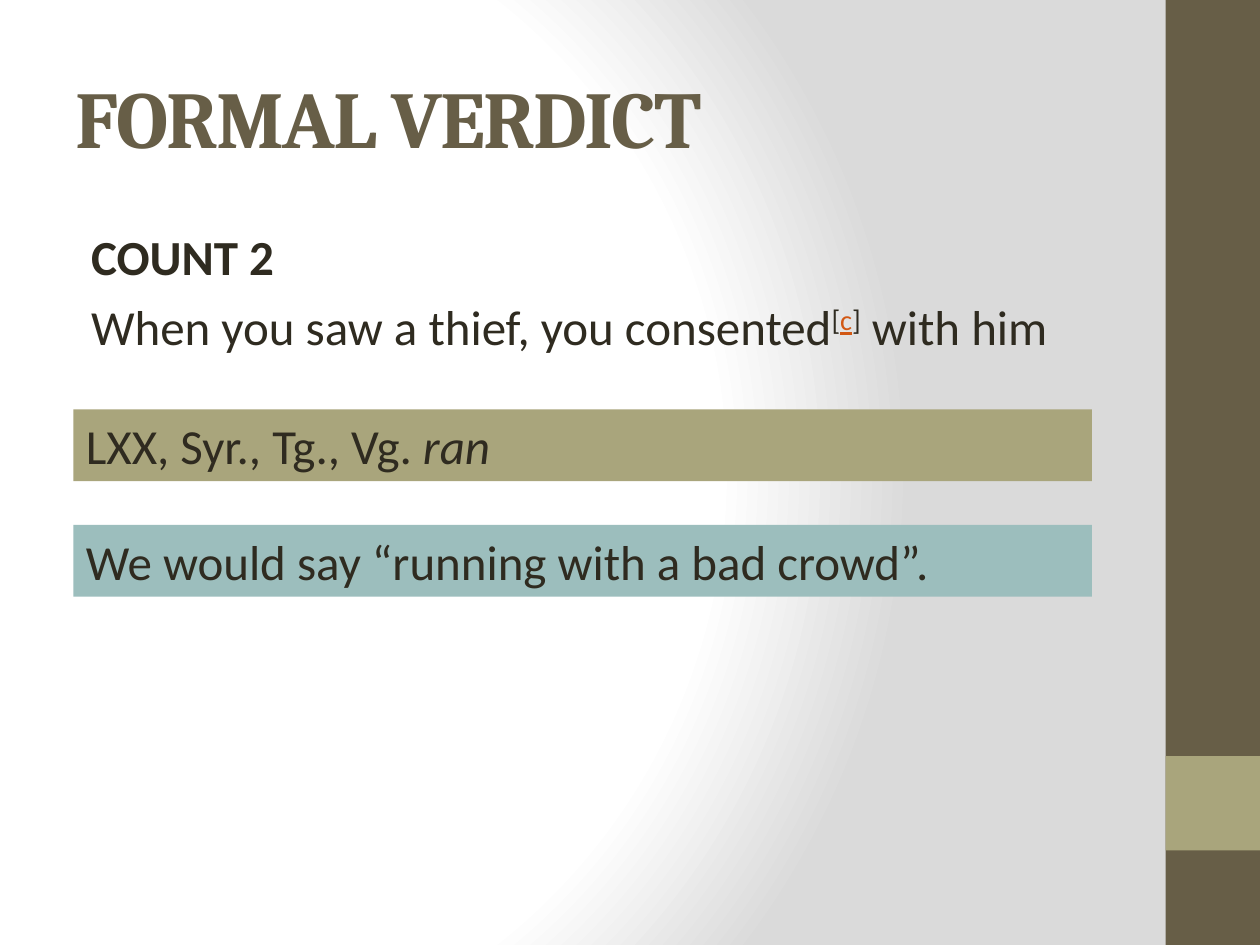
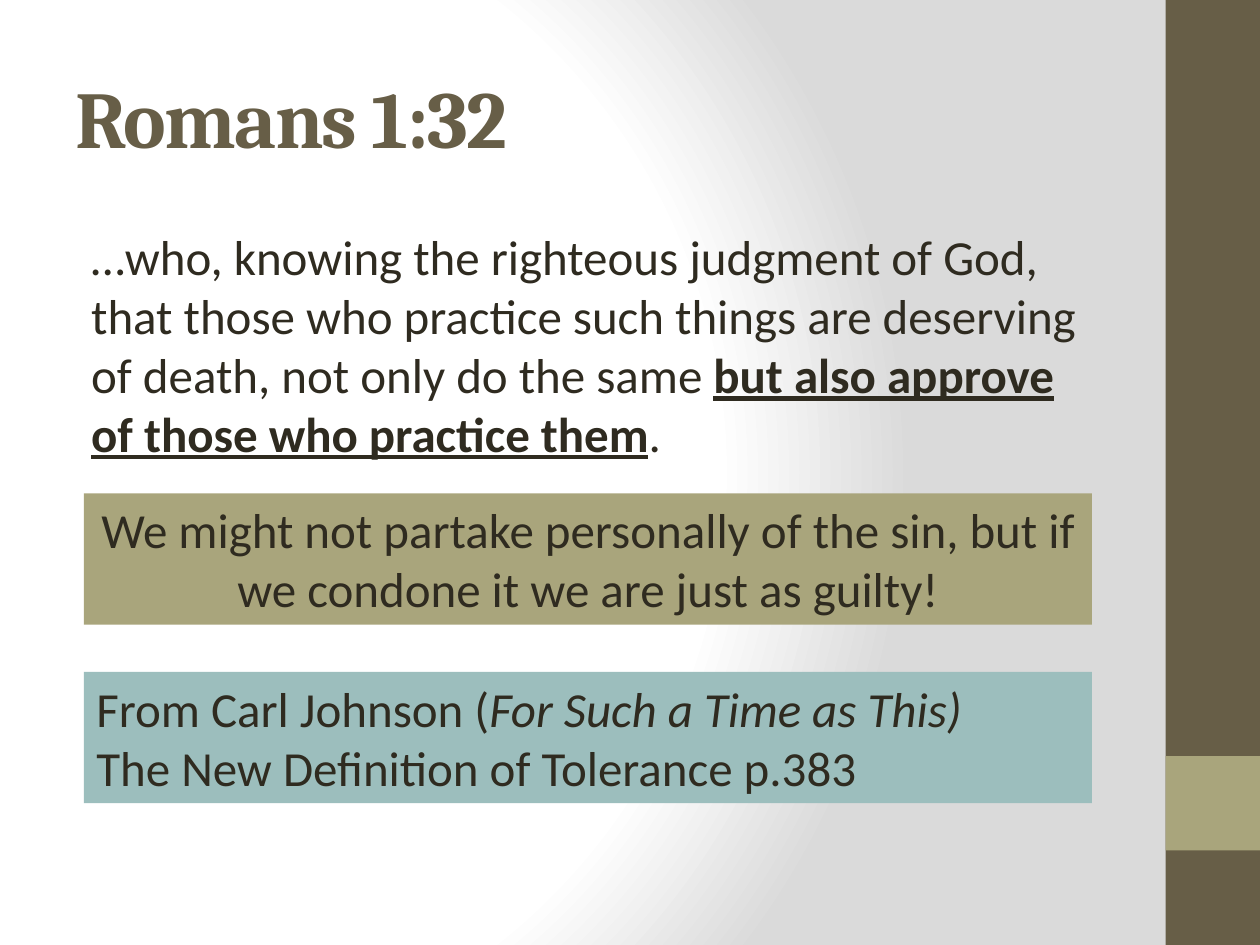
from lxml.etree import fromstring
from pptx import Presentation
from pptx.dml.color import RGBColor
from pptx.enum.shapes import MSO_SHAPE
from pptx.enum.text import MSO_ANCHOR, PP_ALIGN
from pptx.util import Pt

COLORS = {
    "brown": "675E47",
    "olive": "A9A57C",
    "teal": "9CBEBD",
    "ink": "2F2B20",
    "note": "D25814",
    "white": "FFFFFF",
    "gray": "DADADA",
}
BOLD = {"bold": True}
ITALIC = {"italic": True}
RAISED = {"baseline": 30000}


def add_block(page, left, top, width, height, fill):
    block = page.shapes.add_shape(
        MSO_SHAPE.RECTANGLE, Pt(left), Pt(top), Pt(width), Pt(height))
    block.shadow.inherit = False
    block.fill.solid()
    block.fill.fore_color.rgb = RGBColor.from_string(COLORS[fill])
    block.line.fill.background()
    return block


def write_text(box, paragraphs, font="Calibri", size=28, color="ink", spacing=0,
               before=0, indent=0, align=PP_ALIGN.LEFT, anchor=MSO_ANCHOR.TOP):
    frame = box.text_frame
    frame.word_wrap = True
    frame.vertical_anchor = anchor
    for number, spans in enumerate(paragraphs):
        para = frame.add_paragraph() if number else frame.paragraphs[0]
        para.alignment = align
        para.space_before = Pt(before)
        if indent:
            para._p.get_or_add_pPr().set("marL", str(Pt(indent)))
        for text, style in spans:
            span = para.add_run()
            span.text = text
            span.font.name = font
            span.font.size = Pt(size)
            span.font.bold = style.get("bold", False)
            span.font.italic = style.get("italic", False)
            span.font.underline = style.get("underline", False)
            span.font.color.rgb = RGBColor.from_string(COLORS[style.get("color", color)])
            properties = span._r.get_or_add_rPr()
            if spacing:
                properties.set("spc", str(spacing))
            if "baseline" in style:
                properties.set("baseline", str(style["baseline"]))


slides = [
    {
        "title": "FORMAL VERDICT",
        "body_height": 102,
        "body": [
            [("COUNT 2", BOLD)],
            [("When you saw a thief, you consented", {}),
             ("[", RAISED),
             ("c", {"color": "note", "underline": True, **RAISED}),
             ("]", RAISED),
             (" with him", {})],
        ],
        "left": 42,
        "panels": [
            (234, 41, "olive", PP_ALIGN.LEFT,
             [[("LXX, Syr., Tg., Vg. ", {}), ("ran", ITALIC)]]),
            (300, 41, "teal", PP_ALIGN.LEFT,
             [[("We would say “running with a bad crowd”.", {})]]),
        ],
    },
    {
        "title": "Romans 1:32",
        "body_height": 150,
        "body": [
            [("…who, knowing the righteous judgment of God, that those who practice "
              "such things are deserving of death, not only do the same ", {}),
             ("but also approve of those who practice them",
              {"bold": True, "underline": True}),
             (".", {})],
        ],
        "left": 48,
        "panels": [
            (282, 75, "olive", PP_ALIGN.CENTER,
             [[("We might not partake personally of the sin, but if we condone it "
                "we are just as guilty!", {})]]),
            (384, 75, "teal", PP_ALIGN.LEFT,
             [[("From Carl Johnson (", {}), ("For Such a Time as This)", ITALIC)],
              [("The New Definition of Tolerance p.383", {})]]),
        ],
    },
]

deck = Presentation()
deck.slide_width, deck.slide_height = Pt(720), Pt(540)

stops = "".join(
    f'<a:gs pos="{position}"><a:srgbClr val="{COLORS[name]}"/></a:gs>'
    for position, name in [(0, "white"), (75000, "white"), (100000, "gray")])
gradient = fromstring(
    '<a:gradFill xmlns:a="http://schemas.openxmlformats.org/drawingml/2006/main" '
    f'rotWithShape="1"><a:gsLst>{stops}</a:gsLst><a:path path="circle">'
    '<a:fillToRect l="20000" t="50000" r="100000" b="50000"/></a:path></a:gradFill>')
backdrop = deck.slide_master.background
backdrop.fill.solid()
solid = backdrop._cSld.bg.bgPr[0]
solid.getparent().replace(solid, gradient)

for content in slides:
    page = deck.slides.add_slide(deck.slide_layouts[6])
    add_block(page, 666, 0, 54, 540, "brown")
    add_block(page, 666, 432, 54, 54, "olive")

    title = page.shapes.add_textbox(Pt(36), Pt(21.6), Pt(600), Pt(90))
    write_text(title, [[(content["title"], BOLD)]], font="Cambria", size=46,
               color="brown", spacing=-100, anchor=MSO_ANCHOR.MIDDLE)

    body = page.shapes.add_textbox(Pt(36), Pt(126), Pt(600), Pt(content["body_height"]))
    write_text(body, content["body"], before=6, indent=9)

    left = content["left"]
    for top, height, fill, align, paragraphs in content["panels"]:
        panel = add_block(page, left, top, 624 - left, height, fill)
        write_text(panel, paragraphs, align=align)

deck.save("out.pptx")
